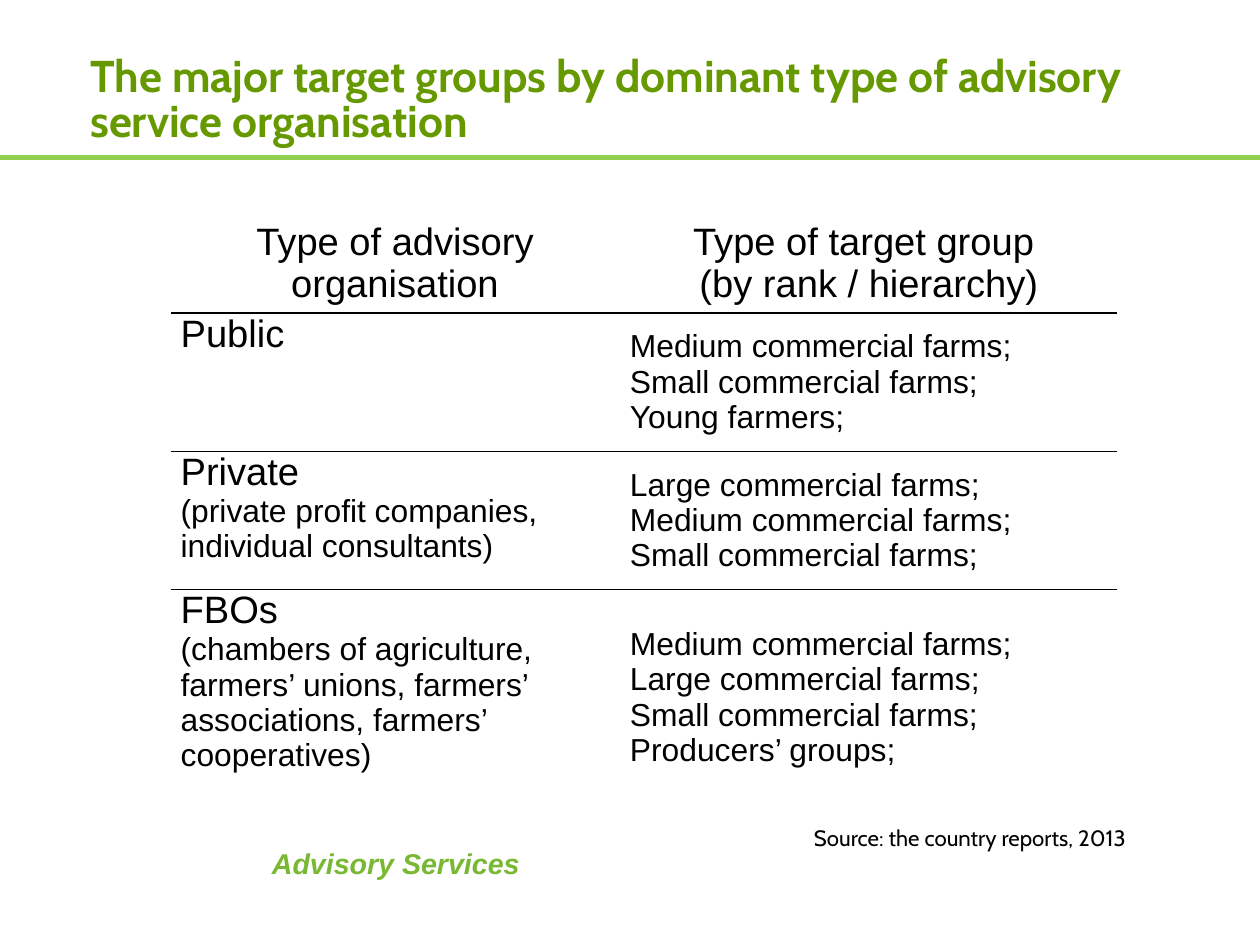
"""Build the slide on target groups by type of advisory organisation."""
from dataclasses import dataclass

from lxml.etree import SubElement
from pptx import Presentation
from pptx.dml.color import RGBColor as Color
from pptx.enum.shapes import MSO_CONNECTOR as Connector
from pptx.enum.text import MSO_ANCHOR as Anchor, MSO_AUTO_SIZE as AutoSize, PP_ALIGN as Align
from pptx.oxml.ns import qn
from pptx.util import Cm, Inches, Pt

TITLE = "The major target groups by dominant type of advisory service organisation"
HEADERS = ["Type of advisory organisation", "Type of target group \n(by rank / hierarchy)"]
ORGANISATIONS = [
    ("Public", "",
     ["Medium commercial farms;", "Small commercial farms;", "Young farmers;"]),
    ("Private", "(private profit companies, \nindividual consultants)",
     ["Large commercial farms;", "Medium commercial farms;", "Small commercial farms;"]),
    ("FBOs", "(chambers of agriculture, \nfarmers’ unions, farmers’ associations, farmers’ cooperatives)",
     ["Medium commercial farms;", "Large commercial farms;", "Small commercial farms;",
      "Producers’ groups;"]),
]
SOURCE = "Source: the country reports, 2013"
FOOTER = "Advisory Services"

TITLE_AREA = (7.17, 2.42, 87.84, 16.69)
TABLE_AREA = (13.61, 23.34, 75.04, 61.9)
SOURCE_AREA = (34.3, 86.75, 56.08, 3.99)
FOOTER_AREA = (20.69, 89.2, 21.69, 4.59)
RULE_TOP = 16.69
COLUMN_SHARES = [34.57, 40.47]
ROW_SHARES = [9.79, 14.63, 14.63, 22.85]
INDENTS = [Inches(0.1), Inches(0.12)]
NO_STYLE = "{2D5ABB26-0587-4C30-8999-92F81FD0307C}"


@dataclass(frozen=True)
class Theme:
    title: str = "669900"
    rule: str = "92D050"
    footer: str = "78B832"
    ink: str = "000000"
    head_font: str = "Cabin"
    body_font: str = "Arial"
    title_size: int = 28
    name_size: int = 24
    detail_size: int = 20
    footer_size: int = 18
    source_size: int = 14
    title_spacing: float = 0.85
    table_spacing: float = 1.0
    note_spacing: float = 0.93


THEME = Theme()
deck = Presentation()
deck.slide_width, deck.slide_height = Cm(28), Cm(21)


def across(share):
    return round(deck.slide_width * share / 100)


def down(share):
    return round(deck.slide_height * share / 100)


def place(area):
    left, top, width, height = area
    return across(left), down(top), across(width), down(height)


def style(span, size, color=THEME.ink, name=THEME.body_font, bold=False, italic=False):
    font = span.font
    font.size, font.name, font.bold, font.italic = Pt(size), name, bold, italic
    font.color.rgb = Color.from_string(color)


def write(para, text, size, align=Align.LEFT, spacing=THEME.table_spacing, **look):
    para.text = text
    para.alignment, para.line_spacing = align, spacing
    for span in para.runs:
        style(span, size, **look)


def indent(para, length):
    para._p.get_or_add_pPr().set("marL", str(length))


def edge(cell, side):
    line = SubElement(cell._tc.get_or_add_tcPr(), qn(f"a:{side}"), w=str(Pt(1)))
    fill = SubElement(line, qn("a:solidFill"))
    SubElement(fill, qn("a:srgbClr"), val=THEME.ink)


def add_title(page):
    title = page.shapes.title
    title.left, title.top, title.width, title.height = place(TITLE_AREA)
    frame = title.text_frame
    frame.word_wrap, frame.auto_size = True, AutoSize.NONE
    frame.vertical_anchor = Anchor.MIDDLE
    frame.margin_left = frame.margin_right = frame.margin_top = frame.margin_bottom = 0
    write(frame.paragraphs[0], TITLE, THEME.title_size, spacing=THEME.title_spacing,
          color=THEME.title, name=THEME.head_font, bold=True)


def add_rule(page):
    height = down(RULE_TOP)
    rule = page.shapes.add_connector(Connector.STRAIGHT, 0, height, deck.slide_width, height)
    rule.line.color.rgb = Color.from_string(THEME.rule)
    rule.line.width = Pt(3)
    SubElement(rule._element.spPr, qn("a:effectLst"))


def add_groups(page):
    frame = page.shapes.add_table(len(ROW_SHARES), len(COLUMN_SHARES), *place(TABLE_AREA))
    table = frame.table
    table.first_row = table.horz_banding = False
    table._tbl.tblPr.find(qn("a:tableStyleId")).text = NO_STYLE
    for column, share in zip(table.columns, COLUMN_SHARES):
        column.width = across(share)
    for row, share in zip(table.rows, ROW_SHARES):
        row.height = down(share)

    for column, header in enumerate(HEADERS):
        para = table.cell(0, column).text_frame.paragraphs[0]
        write(para, header, THEME.name_size, Align.CENTER)
        indent(para, INDENTS[column])
    for row, (name, detail, groups) in enumerate(ORGANISATIONS, 1):
        kind, target = table.cell(row, 0), table.cell(row, 1)
        para = kind.text_frame.paragraphs[0]
        write(para, f"{name}\n{detail}" if detail else name, THEME.detail_size)
        style(para.runs[0], THEME.name_size)
        para = target.text_frame.paragraphs[0]
        write(para, "\n".join(groups), THEME.detail_size)
        indent(para, INDENTS[1])
        target.vertical_anchor = Anchor.MIDDLE

    last = len(ROW_SHARES) - 1
    for number, row in enumerate(table.rows):
        for cell in row.cells:
            cell.margin_left = cell.margin_right = Inches(0.08)
            cell.margin_top = cell.margin_bottom = 0
            if number > 0:
                edge(cell, "lnT")
            if number < last:
                edge(cell, "lnB")
            cell.fill.background()


def add_note(page, area, text, size, wrap, **look):
    frame = page.shapes.add_textbox(*place(area)).text_frame
    frame.word_wrap, frame.auto_size = wrap, AutoSize.SHAPE_TO_FIT_TEXT
    write(frame.paragraphs[0], text, size, spacing=THEME.note_spacing, **look)
    return frame


def main():
    page = deck.slides.add_slide(deck.slide_layouts[5])
    add_rule(page)
    add_title(page)
    add_groups(page)
    source = add_note(page, SOURCE_AREA, SOURCE, THEME.source_size, True,
                      align=Align.RIGHT, name=THEME.head_font)
    source.margin_left = source.margin_right = Inches(0.11)
    source.margin_top = source.margin_bottom = Inches(0.06)
    add_note(page, FOOTER_AREA, FOOTER, THEME.footer_size, False,
             color=THEME.footer, bold=True, italic=True)
    deck.save("out.pptx")


if __name__ == "__main__":
    main()
